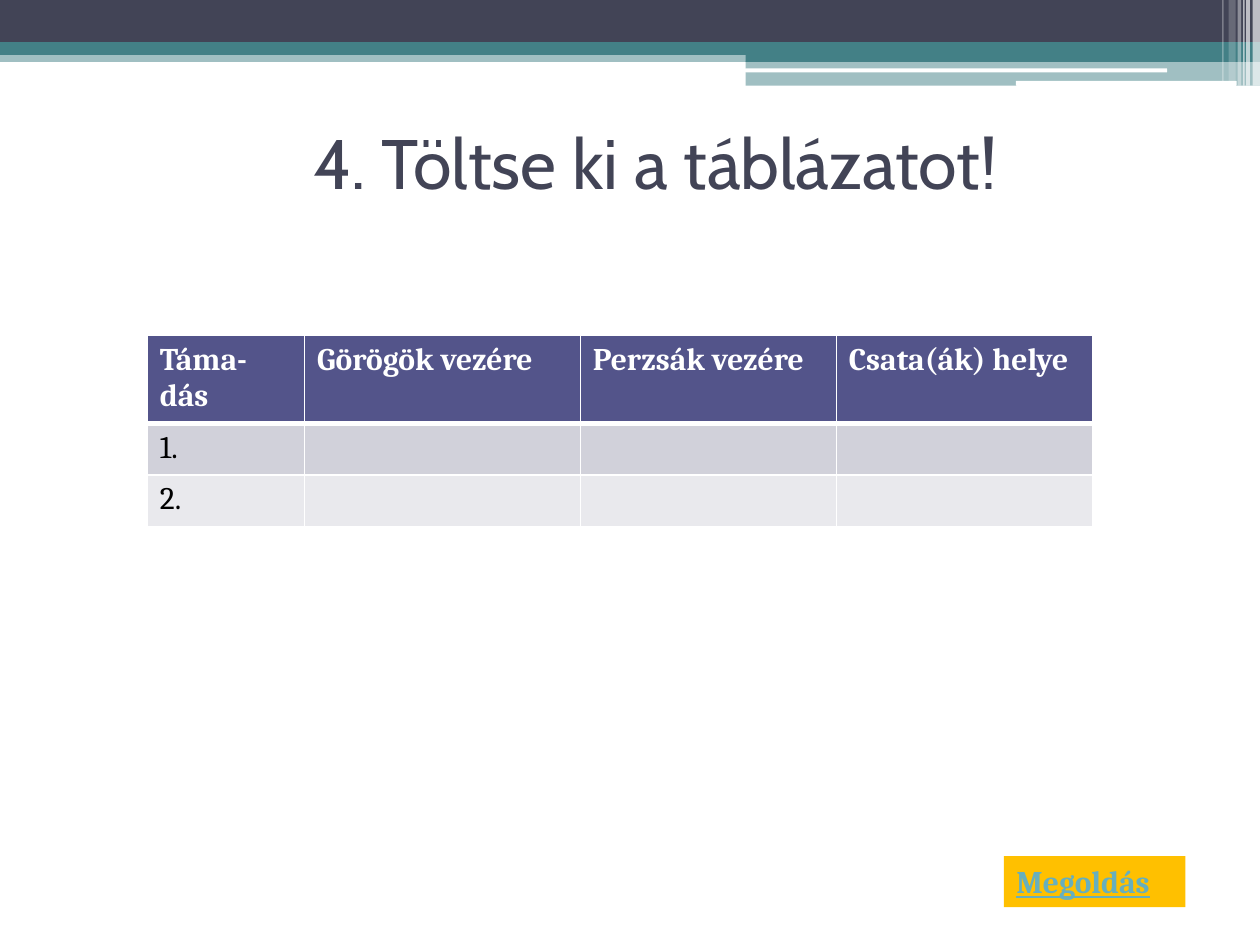
from lxml.etree import SubElement
from pptx import Presentation
from pptx.dml.color import RGBColor
from pptx.enum.shapes import MSO_SHAPE as Shape
from pptx.enum.text import MSO_ANCHOR as Anchor, MSO_AUTO_SIZE as AutoSize, PP_ALIGN as Align
from pptx.oxml import parse_xml
from pptx.oxml.ns import nsdecls, qn
from pptx.util import Cm, Pt

WHITE, NAVY, TEAL = "FFFFFF", "424456", "438086"


def paint(fill, color, opacity=100):
    """Fill with one colour; opacity is in percent."""
    fill.solid()
    fill.fore_color.rgb = RGBColor.from_string(color)
    if opacity < 100:
        color_node = fill._xPr.find(qn("a:solidFill"))[0]
        SubElement(color_node, qn("a:alpha"), val=str(opacity * 1000))


def write(paragraph, text, color, **formats):
    run = paragraph.add_run()
    run.text = text
    run.font.color.rgb = RGBColor.from_string(color)
    for attribute, value in formats.items():
        setattr(run.font, attribute, value)
    return run


deck = Presentation()
deck.slide_width, deck.slide_height = Cm(25.4), Cm(19.05)
slide = deck.slides.add_slide(deck.slide_layouts[6])
shapes = slide.shapes

# Header bands, then the thin white stripes at the right edge
bands = [
    (Shape.RECTANGLE, 0, 1.02, 25.4, 0.23, TEAL, 50),
    (Shape.RECTANGLE, 0, 0, 25.4, 0.86, NAVY, 100),
    (Shape.RECTANGLE, 0, 0.85, 25.4, 0.26, TEAL, 100),
    (Shape.RECTANGLE, 15.03, 1, 10.37, 0.25, TEAL, 100),
    (Shape.RECTANGLE, 15.03, 1.23, 10.37, 0.5, TEAL, 50),
    (Shape.ROUNDED_RECTANGLE, 15.02, 1.38, 8.51, 0.08, WHITE, 100),
    (Shape.ROUNDED_RECTANGLE, 20.48, 1.63, 4.45, 0.1, WHITE, 100),
]
stripes = [
    (25.25, 0.15, 1.73, 65),
    (25.12, 0.08, 1.73, 65),
    (25.06, 0.03, 1.73, 60),
    (24.95, 0.07, 1.73, 40),
    (24.77, 0.14, 1.63, 20),
    (24.64, 0.03, 1.63, 30),
]
bands += [(Shape.RECTANGLE, left, 0, width, height, WHITE, opacity)
          for left, width, height, opacity in stripes]
for kind, left, top, width, height, color, opacity in bands:
    band = shapes.add_shape(kind, Cm(left), Cm(top), Cm(width), Cm(height))
    band.shadow.inherit = False
    band.line.fill.background()
    paint(band.fill, color, opacity)

title = shapes.add_textbox(Cm(1.78), Cm(1.78), Cm(22.86), Cm(2.97)).text_frame
title.word_wrap = True
title.vertical_anchor = Anchor.MIDDLE
title.paragraphs[0].alignment = Align.CENTER
write(title.paragraphs[0], "4. Töltse ki a táblázatot!", NAVY, name="Cabin", size=Pt(40))

# Solution label
solution = shapes.add_textbox(Cm(20.24), Cm(17.26), Cm(3.66), Cm(1.03))
paint(solution.fill, "FFC000")
solution.text_frame.word_wrap = False
solution.text_frame.auto_size = AutoSize.SHAPE_TO_FIT_TEXT
body = dict(name="Cambria", size=Pt(18))
write(solution.text_frame.paragraphs[0], "Megoldás", "67AFBD",
      bold=True, underline=True, **body)

# Table to fill in
rows = [
    ["Táma-dás", "Görögök vezére", "Perzsák vezére", "Csata(ák) helye"],
    ["1.", "", "", ""],
    ["2.", "", "", ""],
]
row_fills = ["53548A", "D1D1DA", "E9E9ED"]
row_heights = [1.75, 1.04, 1.04]
column_widths = [3.17, 5.56, 5.16, 5.16]
battles = shapes.add_table(len(rows), len(column_widths), Cm(2.97), Cm(6.76),
                           Cm(sum(column_widths)), Cm(sum(row_heights))).table
for column, width in zip(battles.columns, column_widths):
    column.width = Cm(width)
for r, texts in enumerate(rows):
    battles.rows[r].height = Cm(row_heights[r])
    is_header = r == 0
    border_widths = {"L": 1, "R": 1, "T": 3 if r == 1 else 1, "B": 3 if is_header else 1}
    for c, text in enumerate(texts):
        cell = battles.cell(r, c)
        for side, points in border_widths.items():
            cell._tc.get_or_add_tcPr().append(parse_xml(
                f'<a:ln{side} {nsdecls("a")} w="{Pt(points)}"><a:solidFill>'
                f'<a:srgbClr val="{WHITE}"/></a:solidFill></a:ln{side}>'))
        paint(cell.fill, row_fills[r])
        if text:
            write(cell.text_frame.paragraphs[0], text,
                  WHITE if is_header else "000000", bold=is_header, **body)

deck.save("out.pptx")
